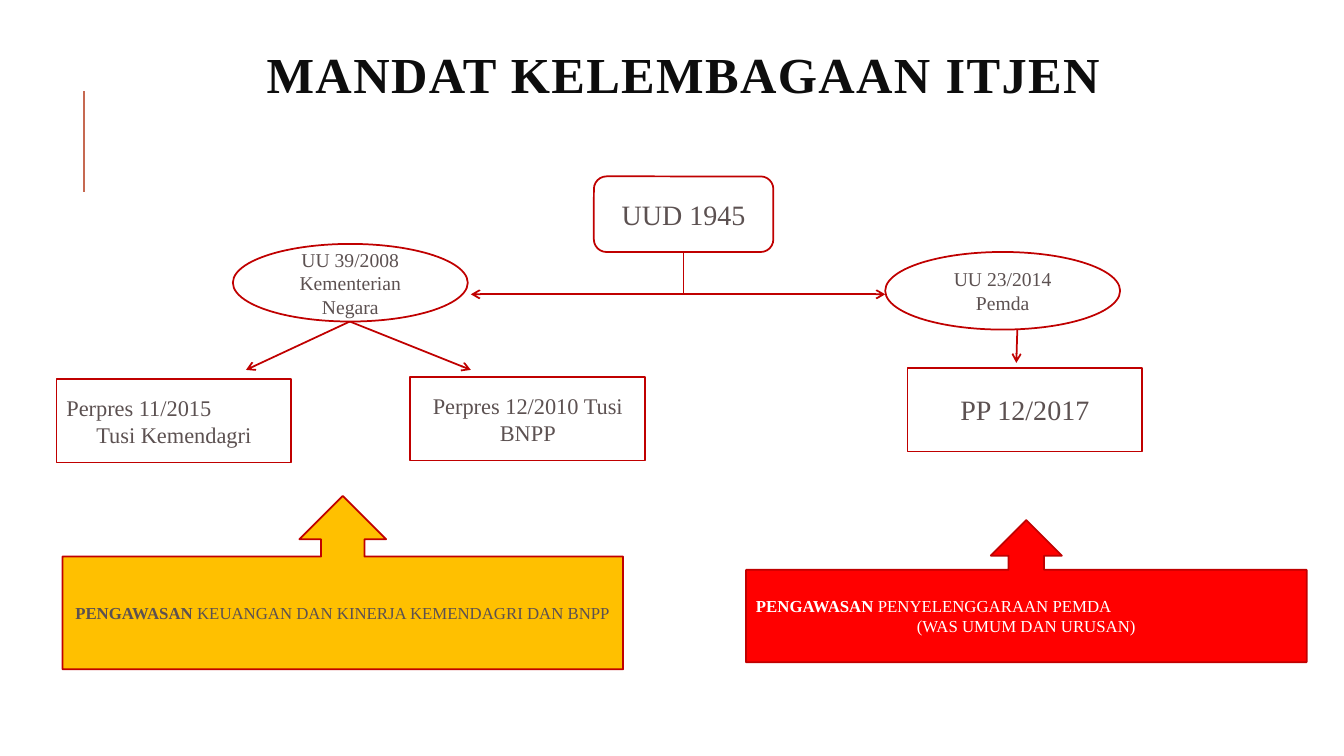
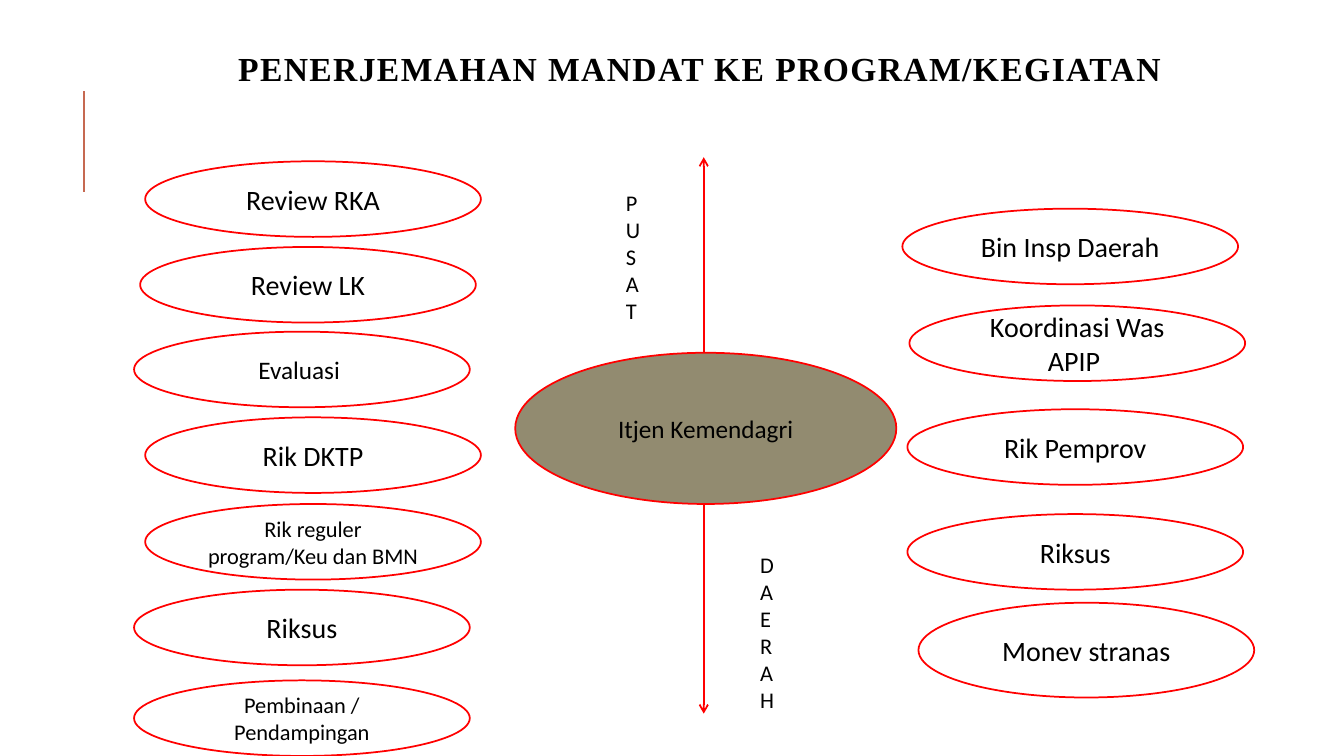
from lxml.etree import SubElement
from pptx import Presentation
from pptx.dml.color import RGBColor
from pptx.enum.shapes import MSO_CONNECTOR, MSO_SHAPE as Preset
from pptx.enum.text import MSO_ANCHOR, MSO_AUTO_SIZE, PP_ALIGN as Align
from pptx.oxml.ns import qn
from pptx.util import Pt

PX = 9144
SERIF = "Times New Roman"
SANS = "Calibri"
COLORS = {
    "accent": "C66951",
    "dark": "0D0D0D",
    "black": "000000",
    "white": "FFFFFF",
    "grey": "5C5151",
    "maroon": "C00000",
    "red": "FF0000",
    "amber": "FFC000",
    "olive": "928B70",
}
RGB = {name: RGBColor.from_string(code) for name, code in COLORS.items()}


def write(frame, lines, size, font, color, first=Align.CENTER, rest=Align.CENTER):
    for number, line in enumerate(lines):
        paragraph = frame.paragraphs[0] if number == 0 else frame.add_paragraph()
        paragraph.alignment = rest if number else first
        lead, _, tail = line.rpartition("|")
        for words, bold in ((lead, True), (tail, False)):
            if words:
                run = paragraph.add_run()
                run.text = words
                run.font.size = Pt(size)
                run.font.name = font
                run.font.bold = bold
                run.font.color.rgb = RGB[color]


def connect(slide, x1, y1, x2, y2, color, width=1.25, ends=()):
    line = slide.shapes.add_connector(
        MSO_CONNECTOR.STRAIGHT, x1 * PX, y1 * PX, x2 * PX, y2 * PX)
    line.line.color.rgb = RGB[color]
    line.line.width = Pt(width)
    properties = line._element.spPr
    for end in ends:
        SubElement(properties.find(qn("a:ln")), qn(f"a:{end}"), type="arrow")
    SubElement(properties, qn("a:effectLst"))


deck = Presentation()
deck.slide_width = 1333 * PX
deck.slide_height = 750 * PX

titles = [
    ("MANDAT KELEMBAGAAN ITJEN", 78, 33, 90, 36, "dark"),
    ("PENERJEMAHAN MANDAT KE PROGRAM/KEGIATAN", 94, 31, 80, 24, "black"),
]
for heading, left, top, height, size, color in titles:
    slide = deck.slides.add_slide(deck.slide_layouts[5])
    connect(slide, 83, 190, 83, 90, "accent", 1.5)
    title = slide.shapes.title
    title.left, title.top = left * PX, top * PX
    title.width, title.height = 1200 * PX, height * PX
    frame = title.text_frame
    frame.vertical_anchor = MSO_ANCHOR.MIDDLE
    write(frame, [heading + "|"], size, SERIF, color)
    frame.paragraphs[0].line_spacing = 0.8
    for run in frame.paragraphs[0].runs:
        run._r.get_or_add_rPr().set("spc", "100")

mandate, programme = deck.slides

connect(mandate, 678, 250, 678, 292, "maroon")
mandate_arrows = [
    (678, 292, 467, 292),
    (678, 292, 878, 292),
    (347, 319, 244, 367),
    (347, 319, 467, 367),
    (1009, 327, 1008, 360),
]
for arrow in mandate_arrows:
    connect(mandate, *arrow, "maroon", ends=["tailEnd"])
connect(programme, 698, 156, 698, 708, "red", ends=["headEnd", "tailEnd"])

mandate_nodes = [
    (Preset.ROUNDED_RECTANGLE, 589, 175, 178, 75, "white", "grey", 20,
     ["UUD 1945"], Align.CENTER),
    (Preset.OVAL, 231, 242, 233, 77, "white", "grey", 14,
     ["UU 39/2008", "Kementerian Negara"], Align.CENTER),
    (Preset.OVAL, 878, 250, 233, 77, "white", "grey", 14,
     ["UU 23/2014", "Pemda"], Align.CENTER),
    (Preset.RECTANGLE, 56, 376, 233, 83, "white", "grey", 16,
     ["Perpres 11/2015", "Tusi Kemendagri"], Align.LEFT),
    (Preset.RECTANGLE, 407, 374, 233, 83, "white", "grey", 16,
     ["Perpres 12/2010 Tusi BNPP"], Align.CENTER),
    (Preset.RECTANGLE, 900, 365, 233, 83, "white", "grey", 20,
     ["PP 12/2017"], Align.CENTER),
    (Preset.UP_ARROW_CALLOUT, 740, 516, 556, 141, "red", "white", 12,
     ["PENGAWASAN| PENYELENGGARAAN PEMDA", "(WAS UMUM DAN URUSAN)"], Align.LEFT),
    (Preset.UP_ARROW_CALLOUT, 62, 492, 556, 172, "amber", "grey", 12,
     ["PENGAWASAN| KEUANGAN DAN KINERJA KEMENDAGRI DAN BNPP"], Align.CENTER),
]

activities = [
    (144, 160, 75, 20, "Review RKA"),
    (139, 245, 75, 20, "Review LK"),
    (133, 329, 75, 18, "Evaluasi "),
    (144, 414, 75, 20, "Rik DKTP"),
    (144, 500, 75, 16, "Rik reguler program/Keu dan BMN"),
    (133, 585, 75, 20, "Riksus"),
    (133, 675, 75, 16, "Pembinaan / Pendampingan"),
    (895, 207, 75, 20, "Bin Insp Daerah"),
    (902, 303, 75, 20, "Koordinasi Was APIP "),
    (900, 406, 75, 20, "Rik Pemprov"),
    (900, 510, 75, 20, "Riksus"),
    (911, 598, 94, 20, "Monev stranas"),
]
programme_nodes = [
    (Preset.OVAL, left, top, 333, height, None, "black", size, [activity], Align.CENTER)
    for left, top, height, size, activity in activities
]
programme_nodes.append(
    (Preset.OVAL, 511, 350, 378, 150, "olive", "black", 18,
     ["Itjen Kemendagri"], Align.CENTER))

for slide, nodes, outline, font in (
        (mandate, mandate_nodes, "maroon", SERIF),
        (programme, programme_nodes, "red", SANS)):
    for preset, left, top, width, height, fill, color, size, lines, first in nodes:
        node = slide.shapes.add_shape(
            preset, left * PX, top * PX, width * PX, height * PX)
        node.shadow.inherit = False
        if fill:
            node.fill.solid()
            node.fill.fore_color.rgb = RGB[fill]
        else:
            node.fill.background()
        node.line.color.rgb = RGB[outline]
        node.line.width = Pt(1.25)
        if preset == Preset.UP_ARROW_CALLOUT:
            for index, share in enumerate((0.25, 0.25, 0.25, 0.65)):
                node.adjustments[index] = share
        node.text_frame.vertical_anchor = MSO_ANCHOR.MIDDLE
        write(node.text_frame, lines, size, font, color, first)

for direction, left, top, height in (("PUSAT", 611, 183, 145), ("DAERAH", 744, 542, 172)):
    label = programme.shapes.add_textbox(left * PX, top * PX, 34 * PX, height * PX)
    label.text_frame.word_wrap = False
    label.text_frame.auto_size = MSO_AUTO_SIZE.SHAPE_TO_FIT_TEXT
    write(label.text_frame, direction, 16, SANS, "black", Align.LEFT, Align.LEFT)

deck.save("out.pptx")
